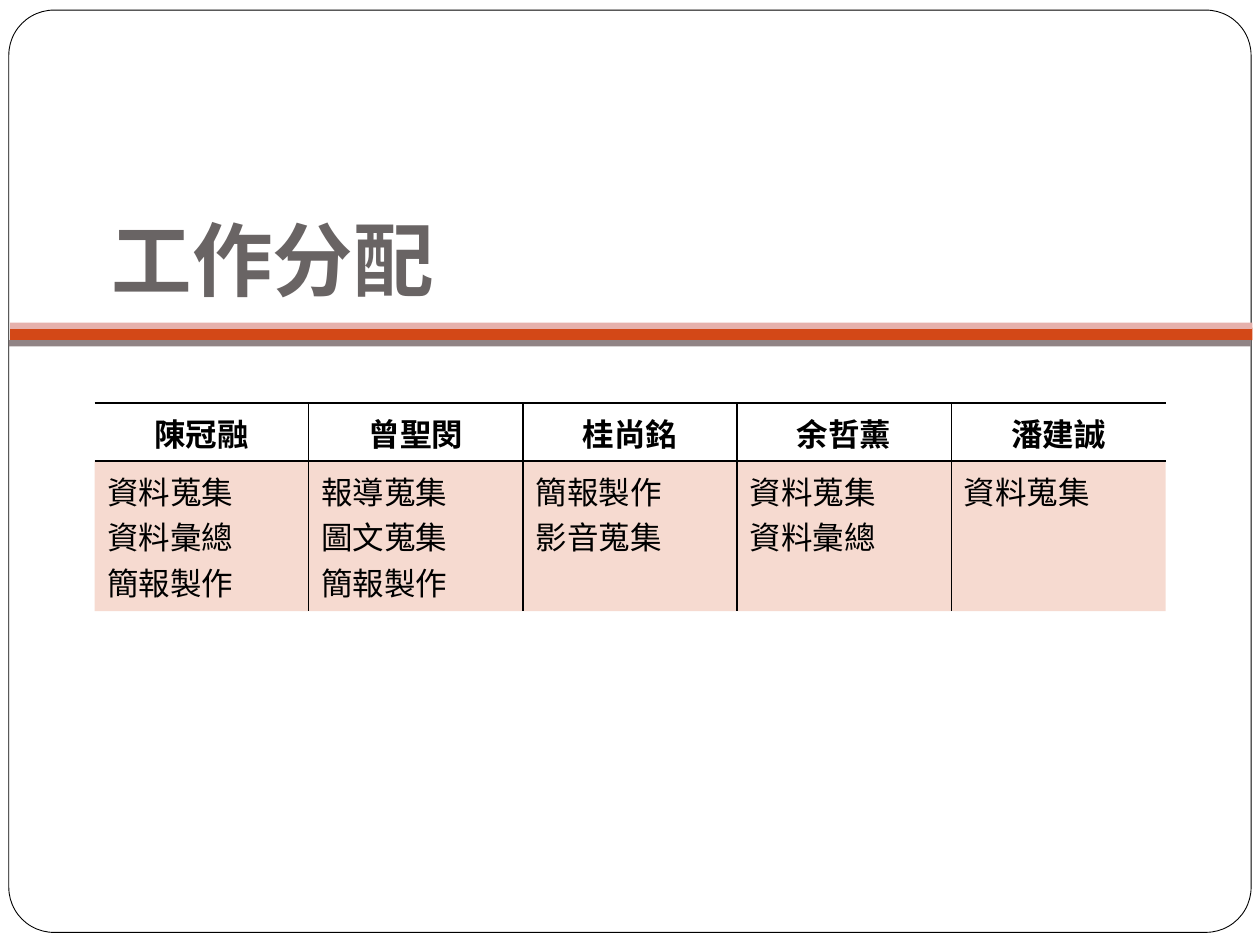
import pptx
import pptx.util
import pptx.dml.color
import pptx.enum.shapes
import pptx.enum.text
import pptx.oxml.ns
import lxml.etree

Inches, Pt = pptx.util.Inches, pptx.util.Pt
RGBColor = pptx.dml.color.RGBColor
SHAPE = pptx.enum.shapes.MSO_SHAPE
ALIGN = pptx.enum.text.PP_ALIGN
ANCHOR = pptx.enum.text.MSO_ANCHOR
qn = pptx.oxml.ns.qn

FONT = "Times New Roman"
WHITE = RGBColor(0xFF, 0xFF, 0xFF)
BLACK = RGBColor(0, 0, 0)
ORANGE = RGBColor(0xD3, 0x48, 0x17)
PINK = RGBColor(0xE6, 0xB1, 0xAC)
TAUPE = RGBColor(0x91, 0x84, 0x85)
GRAY = RGBColor(0x69, 0x64, 0x64)

TASKS = {
    "陳冠融": ["資料蒐集", "資料彙總", "簡報製作"],
    "曾聖閔": ["報導蒐集", "圖文蒐集", "簡報製作"],
    "桂尚銘": ["簡報製作", "影音蒐集"],
    "余哲薰": ["資料蒐集", "資料彙總"],
    "潘建誠": ["資料蒐集"],
}


def write(frame, lines, size=18, color=BLACK, bold=False, align=ALIGN.LEFT):
    """Fill a text frame with one paragraph per line."""
    for i, line in enumerate(lines):
        para = frame.add_paragraph() if i else frame.paragraphs[0]
        para.alignment = align
        run = para.add_run()
        run.text = line
        run.font.name = FONT
        run.font.size = Pt(size)
        run.font.bold = bold
        run.font.color.rgb = color


def block(slide, kind, left, top, width, height, fill):
    shape = slide.shapes.add_shape(
        kind, Inches(left), Inches(top), Inches(width), Inches(height))
    shape.shadow.inherit = False
    shape.fill.solid()
    shape.fill.fore_color.rgb = fill
    shape.line.fill.background()
    return shape


def frame(slide, left, top, width, height):
    """Rounded page border with the three-colour band across it."""
    page = block(slide, SHAPE.ROUNDED_RECTANGLE, left, top, width, height, WHITE)
    page.adjustments[0] = 0.049
    page.line.color.rgb = BLACK
    page.line.width = Pt(0.5)
    for dx, dy, tall, color in ((0.01, 2.52, 0.1, ORANGE),
                                (0.01, 2.48, 0.05, PINK),
                                (0, 2.62, 0.05, TAUPE)):
        block(slide, SHAPE.RECTANGLE, left + dx, top + dy, width, tall, color)


def title(slide, left, top, width, height):
    box = slide.shapes.add_textbox(
        Inches(left), Inches(top), Inches(width), Inches(height))
    text = box.text_frame
    text.word_wrap = True
    text.vertical_anchor = ANCHOR.BOTTOM
    text.margin_bottom = Inches(0.1)
    write(text, ["工作分配"], size=46, color=GRAY, bold=True)


def border(cell, sides):
    """Draw the named sides in black and hide the others."""
    props = cell._tc.get_or_add_tcPr()
    for side in "LRTB":
        line = lxml.etree.SubElement(props, qn("a:ln" + side), w=str(Pt(1)))
        if side in sides:
            fill = lxml.etree.SubElement(line, qn("a:solidFill"))
            lxml.etree.SubElement(fill, qn("a:srgbClr"), val=str(BLACK))
        else:
            lxml.etree.SubElement(line, qn("a:noFill"))


def tint(cell, color, percent):
    """Fill a cell with a colour at the given opacity."""
    cell.fill.solid()
    cell.fill.fore_color.rgb = color
    # Only the cell's own fill, not the fills inside its borders
    tone = cell._tc.tcPr.find(qn("a:solidFill")).find(qn("a:srgbClr"))
    lxml.etree.SubElement(tone, qn("a:alpha"), val=str(percent * 1000))


def duties(slide, left, top, width, height):
    """One column per member: name above, tasks below."""
    count = len(TASKS)
    table = slide.shapes.add_table(
        2, count, Inches(left), Inches(top), Inches(width), Inches(height)).table
    table.first_row = table.horz_banding = False
    head = 0.46
    table.rows[0].height = Inches(head)
    table.rows[1].height = Inches(height - head)
    for col, (name, tasks) in enumerate(TASKS.items()):
        table.columns[col].width = Inches(width / count)
        # Vertical rules only between columns
        sides = ("L" if col else "") + ("R" if col < count - 1 else "")
        top_cell, low_cell = table.cell(0, col), table.cell(1, col)
        border(top_cell, sides + "TB")
        top_cell.fill.background()
        top_cell.vertical_anchor = ANCHOR.MIDDLE
        write(top_cell.text_frame, [name], bold=True, align=ALIGN.CENTER)
        border(low_cell, sides + "T")
        tint(low_cell, ORANGE, 20)
        write(low_cell.text_frame, tasks)


def main():
    deck = pptx.Presentation()
    deck.slide_width, deck.slide_height = Inches(10), Inches(7.5)
    slide = deck.slides.add_slide(deck.slide_layouts[6])
    frame(slide, 0.07, 0.08, 9.86, 7.32)
    title(slide, 0.79, 1.04, 8.5, 1.49)
    duties(slide, 0.75, 3.2, 8.5, 1.65)
    deck.save("out.pptx")


if __name__ == "__main__":
    main()
